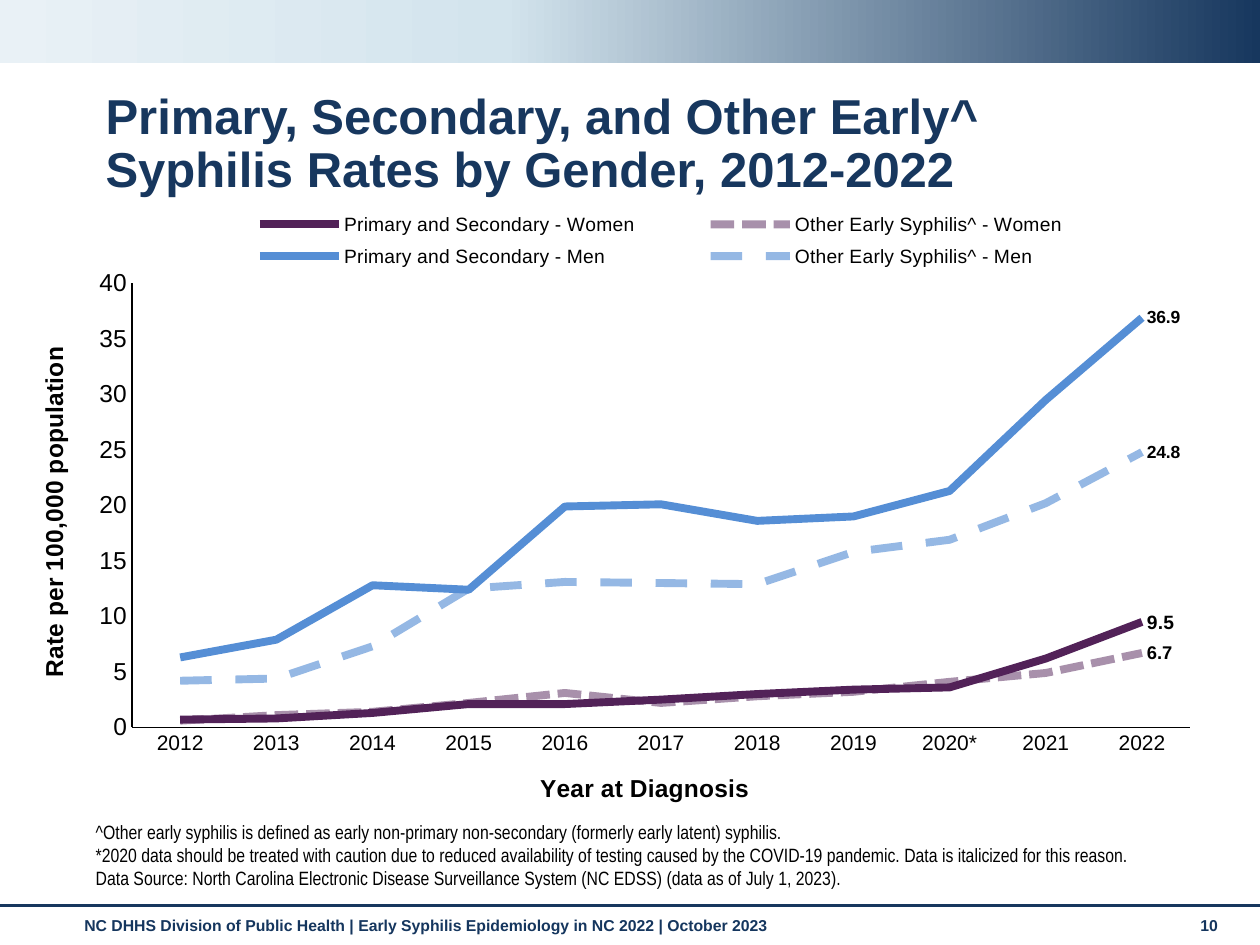
from lxml import etree
from pptx import Presentation
from pptx.chart.data import CategoryChartData
from pptx.dml.color import RGBColor
from pptx.enum.chart import XL_CHART_TYPE, XL_LABEL_POSITION, XL_LEGEND_POSITION, XL_MARKER_STYLE, XL_TICK_MARK
from pptx.enum.dml import MSO_LINE
from pptx.enum.shapes import MSO_CONNECTOR, MSO_SHAPE
from pptx.enum.text import MSO_ANCHOR
from pptx.oxml import parse_xml
from pptx.oxml.ns import nsdecls, qn
from pptx.util import Cm, Pt

LINE_CHART = XL_CHART_TYPE.LINE
LABEL_RIGHT = XL_LABEL_POSITION.RIGHT
LEGEND_TOP = XL_LEGEND_POSITION.TOP
NO_MARKER = XL_MARKER_STYLE.NONE
NO_TICK = XL_TICK_MARK.NONE
SHORT_DASH, LONG_DASH = MSO_LINE.SQUARE_DOT, MSO_LINE.DASH
TOP, BOTTOM = MSO_ANCHOR.TOP, MSO_ANCHOR.BOTTOM

WIDTH, HEIGHT = 25.4, 19.05
NAVY, BLACK, PURPLE, BLUE = "17375E", "000000", "522258", "558ED5"
FOOTER_NAVY = "15365E"

YEARS = [str(year) if year != 2020 else "2020*" for year in range(2012, 2023)]
# name, values, colour, dash, opacity in percent, label size
SERIES = [
    ("Primary and Secondary - Women",
     (0.7, 0.8, 1.3, 2.1, 2.1, 2.5, 3, 3.4, 3.6, 6.2, 9.5), PURPLE, None, 100, 11),
    ("Other Early Syphilis^ - Women",
     (0.6, 1.1, 1.4, 2.2, 3.1, 2.2, 2.8, 3.2, 4.1, 4.9, 6.7), PURPLE, SHORT_DASH, 50, 10.5),
    ("Primary and Secondary - Men",
     (6.3, 7.9, 12.8, 12.4, 19.9, 20.1, 18.6, 19, 21.3, 29.5, 36.9), BLUE, None, 100, 10),
    ("Other Early Syphilis^ - Men",
     (4.2, 4.4, 7.3, 12.5, 13.1, 13, 12.9, 15.8, 16.9, 20.2, 24.8), BLUE, LONG_DASH, 62, 10),
]
FOOTNOTES = [
    "^Other early syphilis is defined as early non-primary non-secondary (formerly early latent) syphilis.",
    "*2020 data should be treated with caution due to reduced availability of testing caused by the "
    "COVID-19 pandemic. Data is italicized for this reason.",
    "Data Source: North Carolina Electronic Disease Surveillance System (NC EDSS) (data as of July 1, 2023).",
]


def rgb(value):
    return RGBColor.from_string(value)


def style_font(font, size, color=BLACK, bold=False, name="Arial"):
    font.name, font.size, font.bold = name, Pt(size), bold
    font.color.rgb = rgb(color)


def add_text(slide, box, lines, size, color, bold=False, name="Arial", anchor=TOP, spacing=None):
    frame = slide.shapes.add_textbox(*map(Cm, box)).text_frame
    frame.word_wrap = True
    frame.vertical_anchor = anchor
    for index, line in enumerate(lines):
        paragraph = frame.add_paragraph() if index else frame.paragraphs[0]
        paragraph.line_spacing = spacing
        run = paragraph.add_run()
        run.text = line
        style_font(run.font, size, color, bold, name)


def add_banner(slide, box):
    banner = slide.shapes.add_shape(MSO_SHAPE.RECTANGLE, *map(Cm, box))
    banner.shadow.inherit = False
    banner.line.fill.background()
    banner.fill.gradient()
    banner.fill.gradient_angle = 180
    stops = banner.fill._fill._gradFill.find(qn("a:gsLst"))
    for stop in list(stops):
        stops.remove(stop)
    for percent, color in ((0, NAVY), (60, "D3E4ED"), (100, "E9F1F6")):
        stop = etree.SubElement(stops, qn("a:gs"), pos=str(percent * 1000))
        etree.SubElement(stop, qn("a:srgbClr"), val=color)


def add_footer(slide, box):
    left, top, width, _ = box
    rule = slide.shapes.add_connector(
        MSO_CONNECTOR.STRAIGHT, Cm(left), Cm(top), Cm(left + width), Cm(top))
    rule.line.color.rgb = rgb(NAVY)
    rule.line.width = Pt(1.75)
    etree.SubElement(rule._element.spPr, qn("a:effectLst"))
    add_text(slide, (left + 1.45, top + 0.08, 22.2, 0.74),
             ["NC DHHS Division of Public Health | Early Syphilis Epidemiology in NC 2022 | October 2023"],
             9, FOOTER_NAVY, True)
    add_text(slide, (left + 23.95, top + 0.08, 1.12, 0.74), ["10"], 9, FOOTER_NAVY, True)


def manual_layout(x, y, width, height, inner=False):
    """Return a c:layout in fractions of the chart area."""
    target = '<c:layoutTarget val="inner"/>' if inner else ""
    sizes = "".join(f'<c:{tag} val="{value}"/>'
                    for tag, value in zip("xywh", (x, y, width, height)))
    return parse_xml(f'<c:layout {nsdecls("c")}><c:manualLayout>{target}<c:xMode val="edge"/>'
                     f'<c:yMode val="edge"/>{sizes}</c:manualLayout></c:layout>')


def style_axis(axis, title, size):
    axis.has_major_gridlines = False
    axis.major_tick_mark = axis.minor_tick_mark = NO_TICK
    axis.format.line.color.rgb = rgb(BLACK)
    axis.format.line.width = Pt(0.75)
    style_font(axis.tick_labels.font, size)
    run = axis.axis_title.text_frame.paragraphs[0].add_run()
    run.text = title
    style_font(run.font, 14, bold=True)


def style_series(series, color, dash, opacity, label_size):
    series.smooth = False
    series.marker.style = NO_MARKER
    line = series.format.line
    line.color.rgb = rgb(color)
    line.width = Pt(4.5)
    if dash:
        line.dash_style = dash
        color_element = line._ln.find(".//" + qn("a:srgbClr"))
        etree.SubElement(color_element, qn("a:alpha"), val=str(opacity * 1000))
    label = series.points[len(YEARS) - 1].data_label
    style_font(label.font, label_size, bold=True)
    label.position = LABEL_RIGHT


def add_rate_chart(slide, box):
    data = CategoryChartData()
    data.categories = YEARS
    for name, values, *_ in SERIES:
        data.add_series(name, values)
    chart = slide.shapes.add_chart(LINE_CHART, *map(Cm, box), data).chart
    chart.has_title = False
    style_font(chart.font, 10, name="TeX Gyre Schola")
    plot = chart.plots[0]
    plot.vary_by_categories = False
    for series, (_, _, *style) in zip(plot.series, SERIES):
        style_series(series, *style)

    style_axis(chart.category_axis, "Year at Diagnosis", 12)
    style_axis(chart.value_axis, "Rate per 100,000 population", 14)
    chart.value_axis.minimum_scale = 0
    chart.value_axis.maximum_scale = 40
    chart.value_axis.major_unit = 5

    chart.has_legend = True
    legend = chart.legend
    legend.position = LEGEND_TOP
    legend.include_in_layout = False
    style_font(legend.font, 11)

    plot_area = chart._chartSpace.chart.plotArea
    for parent, layout in ((plot_area, manual_layout(0.09, 0.15, 0.9, 0.67, True)),
                           (legend._element, manual_layout(0.14, 0.03, 0.8, 0.11))):
        for old in parent.findall(qn("c:layout")):
            parent.remove(old)
        position = 1 if parent is legend._element else 0
        parent.insert(position, layout)


def main():
    presentation = Presentation()
    presentation.slide_width, presentation.slide_height = Cm(WIDTH), Cm(HEIGHT)
    slide = presentation.slides.add_slide(presentation.slide_layouts[6])
    add_footer(slide, (0, 18.26, WIDTH, 0.79))
    add_banner(slide, (0, 0, WIDTH, 1.27))
    add_text(slide, (1.88, 1.73, 21.8, 1.52),
             ["Primary, Secondary, and Other Early^ Syphilis Rates by Gender, 2012-2022"],
             28, NAVY, True, spacing=0.9)
    add_rate_chart(slide, (0.53, 3.71, 23.7, 13.36))
    add_text(slide, (1.68, 16.69, 22.2, 1.37), FOOTNOTES, 11, BLACK,
             name="Arial Narrow", anchor=BOTTOM)
    presentation.save("out.pptx")


if __name__ == "__main__":
    main()
